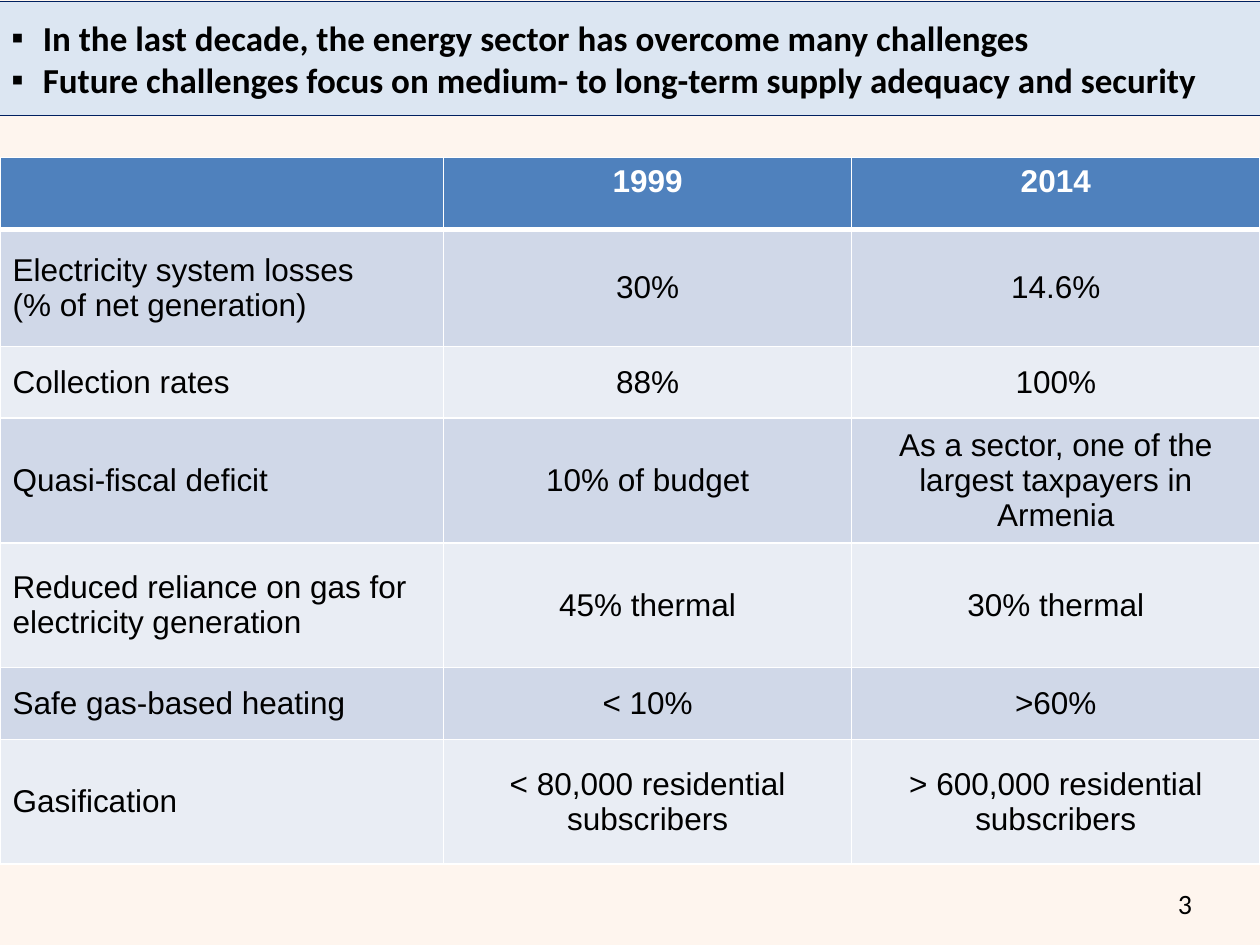
from lxml.etree import SubElement
from pptx import Presentation
from pptx.dml.color import RGBColor
from pptx.enum.text import MSO_ANCHOR, MSO_AUTO_SIZE, PP_ALIGN
from pptx.oxml.ns import qn
from pptx.util import Inches, Pt

# Content
POINTS = [
    "In the last decade, the energy sector has overcome many challenges",
    "Future challenges focus on medium- to long-term supply adequacy and security",
]
ROWS = [
    ("", "1999", "2014"),
    ("Electricity system losses\n(% of net generation)", "30%", "14.6%"),
    ("Collection rates", "88%", "100%"),
    ("Quasi-fiscal deficit", "10% of budget",
     "As a sector, one of the largest taxpayers in Armenia"),
    ("Reduced reliance on gas for electricity generation",
     "45% thermal", "30% thermal"),
    ("Safe gas-based heating", "< 10%", ">60%"),
    ("Gasification", "< 80,000 residential subscribers",
     "> 600,000 residential subscribers"),
]
PAGE = "3"

# Layout and formats
WIDTHS = [3.52, 3.24, 3.24]
HEIGHTS = [0.57, 0.93, 0.57, 0.99, 0.99, 0.57, 0.99]
BANDS = ["E9EDF4", "D0D8E8"]
HEAD = {"name": "Arial", "size": Pt(18), "bold": True}
BODY = {**HEAD, "bold": False}
TITLE = {"name": "Calibri", "size": Pt(20), "bold": True}
FOOT = {"name": "Calibri", "size": Pt(16), "bold": False}


def paint(fill, tint):
    fill.solid()
    fill.fore_color.rgb = RGBColor.from_string(tint)


def style(para, look, tint, align):
    para.alignment = align
    for key, value in look.items():
        setattr(para.font, key, value)
    paint(para.font.fill, tint)


def place(shape, *box):
    for key, value in zip(("left", "top", "width", "height"), box):
        setattr(shape, key, Inches(value))


def bullet(para):
    props = para._p.get_or_add_pPr()
    props.set("marL", str(Inches(0.25)))
    props.set("indent", str(-Inches(0.25)))
    SubElement(props, qn("a:buFont"), typeface="Arial")
    SubElement(props, qn("a:buChar"), char="▪")


def border(cell, sides):
    props = cell._tc.get_or_add_tcPr()
    for side, width in sides.items():
        line = SubElement(props, qn("a:ln" + side), w=str(Pt(width)))
        fill = SubElement(line, qn("a:solidFill"))
        SubElement(fill, qn("a:srgbClr"), val="FFFFFF")


deck = Presentation()
deck.slide_width, deck.slide_height = Inches(10), Inches(7.5)
slide = deck.slides.add_slide(deck.slide_layouts[5])
paint(slide.background.fill, "FEF5EE")

# Title band with two bullets
title = slide.shapes.title
place(title, -0.01, 0.01, 10.01, 0.91)
paint(title.fill, "DCE6F2")
paint(title.line.fill, "002060")
title.line.width = Pt(0.5)
frame = title.text_frame
frame.text = "\n".join(POINTS)
frame.auto_size = MSO_AUTO_SIZE.NONE
frame.vertical_anchor = MSO_ANCHOR.MIDDLE
for para in frame.paragraphs:
    bullet(para)
    style(para, TITLE, "000000", PP_ALIGN.LEFT)

# Comparison table
table = slide.shapes.add_table(
    len(ROWS), len(WIDTHS), Inches(0), Inches(1.25),
    Inches(sum(WIDTHS)), Inches(sum(HEIGHTS))).table
for col, width in zip(table.columns, WIDTHS):
    col.width = Inches(width)
for row, height in zip(table.rows, HEIGHTS):
    row.height = Inches(height)
for r, texts in enumerate(ROWS):
    top = r == 0
    for c, text in enumerate(texts):
        cell = table.cell(r, c)
        border(cell, {"L": 1, "R": 1, "T": 3 if r == 1 else 1,
                      "B": 3 if top else 1})
        paint(cell.fill, "4F81BD" if top else BANDS[r % 2])
        cell.vertical_anchor = MSO_ANCHOR.TOP if top else MSO_ANCHOR.MIDDLE
        cell.text = text
        for para in cell.text_frame.paragraphs:
            style(para, HEAD if top else BODY,
                  "FFFFFF" if top else "000000",
                  PP_ALIGN.CENTER if top or c else PP_ALIGN.LEFT)

# Page number
page = slide.shapes.add_textbox(0, 0, 0, 0)
place(page, 8.99, 6.97, 0.83, 0.4)
frame = page.text_frame
frame.word_wrap = True
frame.vertical_anchor = MSO_ANCHOR.MIDDLE
frame.text = PAGE
style(frame.paragraphs[0], FOOT, "000000", PP_ALIGN.CENTER)

deck.save("out.pptx")
